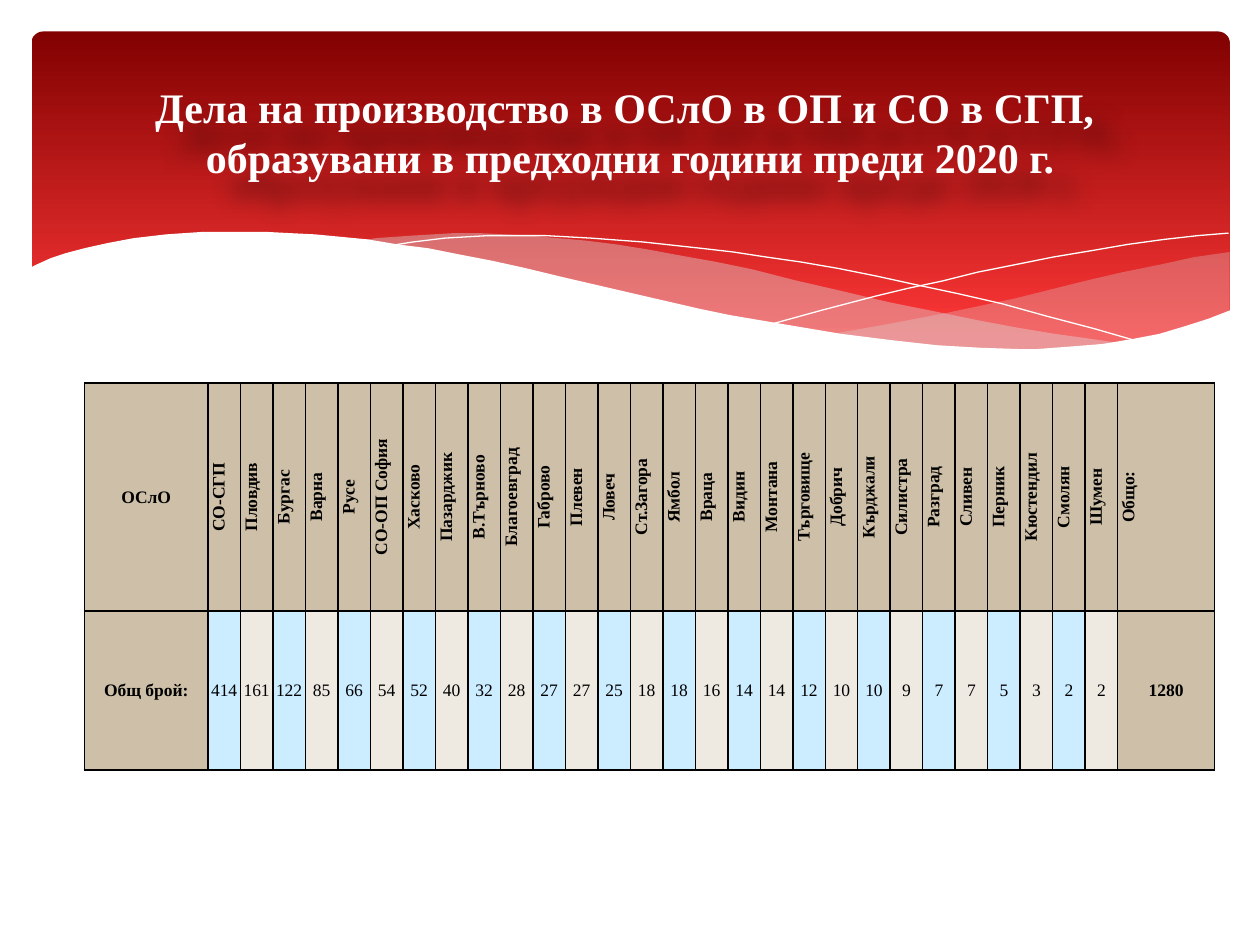
from lxml import etree
from pptx import Presentation
from pptx.dml.color import RGBColor
from pptx.enum.shapes import MSO_SHAPE
from pptx.enum.text import MSO_ANCHOR, PP_ALIGN
from pptx.oxml import parse_xml
from pptx.oxml.ns import nsdecls, qn
from pptx.util import Inches, Pt

FONT = "Times New Roman"
BLACK = RGBColor(0x00, 0x00, 0x00)
WHITE = RGBColor(0xFF, 0xFF, 0xFF)
DARK_RED = RGBColor(0x82, 0x01, 0x01)
BRIGHT_RED = RGBColor(0xFE, 0x37, 0x37)
MIST = RGBColor(0xDE, 0xDE, 0xE0)
TAN = RGBColor(0xCD, 0xBF, 0xA8)
PALE_BLUE = RGBColor(0xCC, 0xEC, 0xFF)
PALE_TAN = RGBColor(0xEE, 0xEA, 0xE2)

TITLE = ("Дела на производство в ОСлО в ОП и СО в СГП, \v"
         "образувани в предходни години преди 2020 г.")

CASES = [
    ("СО-СГП", 414), ("Пловдив", 161), ("Бургас", 122), ("Варна", 85),
    ("Русе", 66), ("СО-ОП София", 54), ("Хасково", 52), ("Пазарджик", 40),
    ("В.Търново", 32), ("Благоевград", 28), ("Габрово", 27), ("Плевен", 27),
    ("Ловеч", 25), ("Ст.Загора", 18), ("Ямбол", 18), ("Враца", 16),
    ("Видин", 14), ("Монтана", 14), ("Търговище", 12), ("Добрич", 10),
    ("Кърджали", 10), ("Силистра", 9), ("Разград", 7), ("Сливен", 7),
    ("Перник", 5), ("Кюстендил", 3), ("Смолян", 2), ("Шумен", 2),
]

RIGHT_WAVE = [
    (9.76, 2), (9.48, 2.04), (9.21, 2.1), (8.91, 2.16), (8.61, 2.23),
    (8.05, 2.37), (7.53, 2.48), (7.06, 2.57), (6.61, 2.65), (6.91, 2.69),
    (7.19, 2.72), (7.45, 2.75), (7.69, 2.77), (8.03, 2.78), (8.35, 2.77),
    (8.63, 2.75), (8.89, 2.72), (9.13, 2.67), (9.35, 2.62), (9.49, 2.57),
    (9.63, 2.52), (9.76, 2.47),
]
MIDDLE_WAVE = [
    (8.93, 2.73), (8.66, 2.69), (8.37, 2.65), (8.07, 2.6), (7.75, 2.54),
    (7.41, 2.47), (7.06, 2.4), (6.68, 2.31), (6.29, 2.22), (5.98, 2.14),
    (5.69, 2.08), (5.41, 2.03), (5.14, 1.98), (4.89, 1.94), (4.65, 1.91),
    (4.42, 1.89), (4.2, 1.87), (3.99, 1.86), (3.8, 1.85), (3.61, 1.85),
    (3.28, 1.87), (2.99, 1.89), (2.86, 1.91), (3.23, 1.96), (3.62, 2.03),
    (4.04, 2.11), (4.49, 2.22), (4.91, 2.32), (5.3, 2.4), (5.66, 2.48),
    (6.01, 2.55), (6.34, 2.61), (6.65, 2.66), (6.95, 2.7), (7.22, 2.74),
    (7.48, 2.76), (7.73, 2.77), (7.96, 2.78), (8.28, 2.78), (8.57, 2.77),
    (8.76, 2.75),
]
FALLING_LINE = [
    (3.09, 1.95), (3.28, 1.92), (3.53, 1.89), (3.87, 1.87), (4.33, 1.87),
    (4.69, 1.89), (5.1, 1.92), (5.56, 1.97), (5.82, 2), (6.08, 2.04),
    (6.36, 2.08), (6.65, 2.13), (6.95, 2.19), (7.27, 2.26), (7.6, 2.33),
    (7.95, 2.41), (8.31, 2.51), (8.69, 2.61), (9.07, 2.72),
]
RISING_LINE = [
    (6.13, 2.57), (6.53, 2.46), (6.95, 2.35), (7.2, 2.29), (7.48, 2.23),
    (7.76, 2.16), (8.06, 2.1), (8.36, 2.04), (8.66, 1.99), (8.95, 1.94),
    (9.24, 1.9), (9.51, 1.87), (9.75, 1.85),
]
WHITE_WAVE = [
    (9.77, 2.46), (9.59, 2.53), (9.4, 2.59), (9.2, 2.65), (8.99, 2.69),
    (8.75, 2.73), (8.5, 2.75), (8.23, 2.77), (8.09, 2.77), (7.78, 2.76),
    (7.44, 2.74), (7.08, 2.7), (6.68, 2.65), (6.26, 2.58), (5.79, 2.5),
    (5.55, 2.45), (5.03, 2.33), (4.47, 2.2), (4.18, 2.13), (3.91, 2.07),
    (3.65, 2.02), (3.4, 1.97), (3.16, 1.94), (2.92, 1.9), (2.71, 1.88),
    (2.5, 1.86), (2.3, 1.85), (2.11, 1.84), (1.61, 1.84), (1.32, 1.86),
    (1.06, 1.89), (0.85, 1.93), (0.67, 1.97), (0.52, 2.01), (0.4, 2.05),
    (0.29, 2.1), (0.23, 2.13), (0.23, 3.29), (9.77, 3.29),
]


def add_banner(slide):
    banner = slide.shapes.add_shape(MSO_SHAPE.ROUNDED_RECTANGLE, Inches(0.25),
                                    Inches(0.25), Inches(9.51), Inches(2.7))
    banner.adjustments[0] = 0.034
    banner.shadow.inherit = False
    banner.line.fill.background()
    banner.fill.gradient()
    banner.fill.gradient_angle = 270
    stops = banner.fill.gradient_stops
    for stop, position, color in zip(stops, (0, 0.9), (DARK_RED, BRIGHT_RED)):
        stop.position = position
        stop.color.rgb = color


def add_outline(slide, points, closed):
    start, *others = [(Inches(x), Inches(y)) for x, y in points]
    builder = slide.shapes.build_freeform(*start)
    builder.add_line_segments(others, close=closed)
    shape = builder.convert_to_shape()
    shape.shadow.inherit = False
    return shape


def add_wave(slide, points, color, opacity=100):
    wave = add_outline(slide, points, closed=True)
    wave.line.fill.background()
    wave.fill.solid()
    wave.fill.fore_color.rgb = color
    if opacity < 100:
        color_element = wave.fill._xPr.find(qn("a:solidFill"))[0]
        etree.SubElement(color_element, qn("a:alpha"), val=str(opacity * 1000))


def add_curve(slide, points):
    curve = add_outline(slide, points, closed=False)
    curve.fill.background()
    curve.line.color.rgb = WHITE
    curve.line.width = Pt(0)


def set_font(paragraph, size, color, bold):
    paragraph.alignment = PP_ALIGN.CENTER
    font = paragraph.font
    font.name, font.size, font.bold = FONT, Pt(size), bold
    font.color.rgb = color


def add_title(slide):
    box = slide.shapes.add_textbox(0, Inches(0.36), Inches(10), Inches(1.37))
    frame = box.text_frame
    frame.word_wrap = True
    frame.vertical_anchor = MSO_ANCHOR.MIDDLE
    paragraph = frame.paragraphs[0]
    paragraph.text = TITLE
    set_font(paragraph, 24, WHITE, True)
    box._element.spPr.append(parse_xml(
        f'<a:effectLst {nsdecls("a")}><a:outerShdw blurRad="152400" '
        f'dist="254000" dir="2700000"><a:srgbClr val="000000">'
        f'<a:alpha val="40000"/></a:srgbClr></a:outerShdw></a:effectLst>'))


def add_borders(cell_properties):
    """Draw a thin black line on all four sides, ahead of the cell's fill."""
    for index, side in enumerate(("lnL", "lnR", "lnT", "lnB")):
        cell_properties.insert(index, parse_xml(
            f'<a:{side} {nsdecls("a")} w="{Pt(1)}"><a:solidFill>'
            f'<a:srgbClr val="{BLACK}"/></a:solidFill></a:{side}>'))


def fill_cell(cell, text, color, bold=True, vertical=False):
    cell.text = str(text)
    set_font(cell.text_frame.paragraphs[0], 10, BLACK, bold)
    cell.vertical_anchor = MSO_ANCHOR.MIDDLE
    cell.margin_left = cell.margin_right = cell.margin_top = Inches(0.01)
    cell.margin_bottom = 0
    cell.fill.solid()
    cell.fill.fore_color.rgb = color
    cell_properties = cell._tc.get_or_add_tcPr()
    if vertical:
        cell_properties.set("vert", "vert270")
    add_borders(cell_properties)


def add_case_table(slide):
    width, first_width, total_width = 8.98, 0.98, 0.77
    total_column = len(CASES) + 1
    table = slide.shapes.add_table(2, total_column + 1, Inches(0.67), Inches(3.04),
                                   Inches(width), Inches(3.07)).table
    for column in table.columns:
        column.width = Inches((width - first_width - total_width) / len(CASES))
    table.columns[0].width = Inches(first_width)
    table.columns[total_column].width = Inches(total_width)
    table.rows[0].height, table.rows[1].height = Inches(1.81), Inches(1.26)

    fill_cell(table.cell(0, 0), "ОСлО", TAN)
    fill_cell(table.cell(1, 0), "Общ брой:", TAN)
    for column, (office, count) in enumerate(CASES, start=1):
        fill_cell(table.cell(0, column), office, TAN, vertical=True)
        fill_cell(table.cell(1, column), count,
                  PALE_BLUE if column % 2 else PALE_TAN, bold=False)
    fill_cell(table.cell(0, total_column), "Общо:", TAN, vertical=True)
    fill_cell(table.cell(1, total_column), sum(count for _, count in CASES), TAN)


def main():
    presentation = Presentation()
    presentation.slide_width, presentation.slide_height = Inches(10), Inches(7.5)
    slide = presentation.slides.add_slide(presentation.slide_layouts[6])
    add_banner(slide)
    add_wave(slide, RIGHT_WAVE, MIST, 29)
    add_wave(slide, MIDDLE_WAVE, MIST, 40)
    add_curve(slide, FALLING_LINE)
    add_curve(slide, RISING_LINE)
    add_wave(slide, WHITE_WAVE, WHITE)
    add_title(slide)
    add_case_table(slide)
    presentation.save("out.pptx")


if __name__ == "__main__":
    main()
